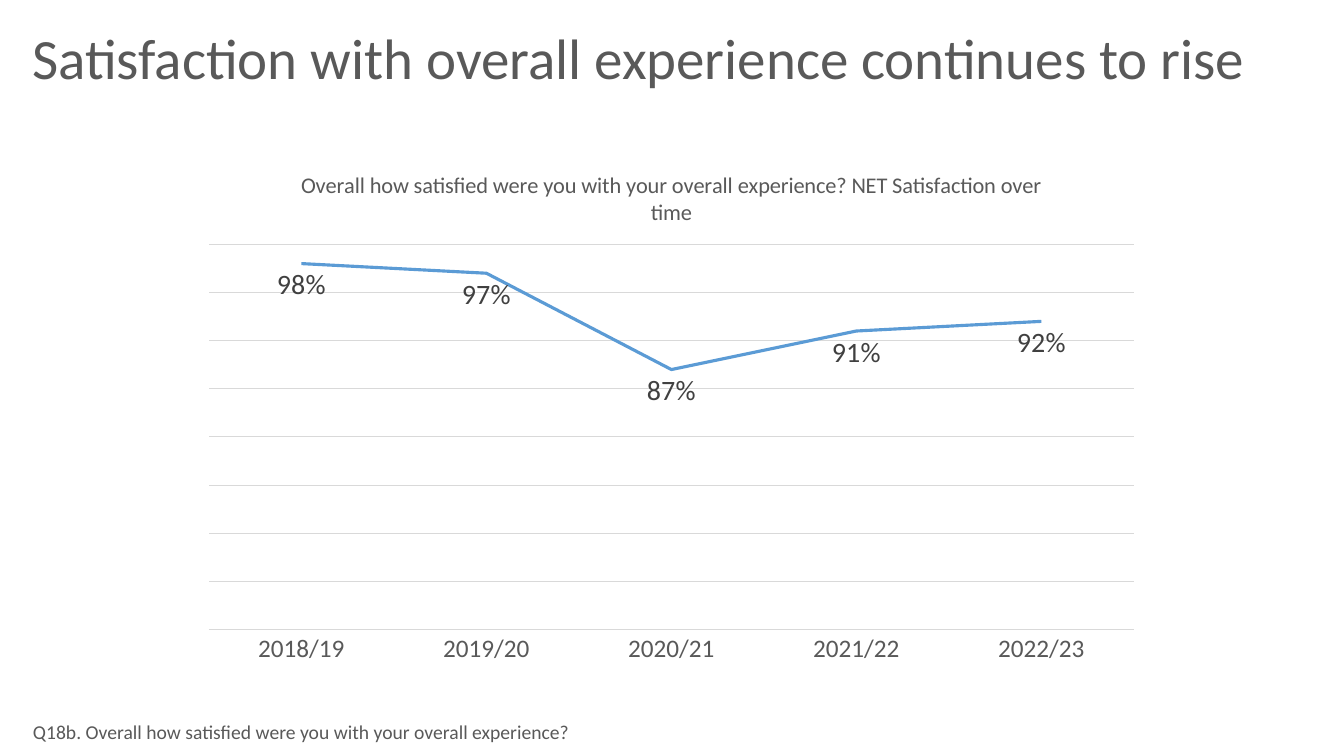
import pptx
import pptx.chart.data
import pptx.dml.color
import pptx.enum.chart
import pptx.enum.text
import pptx.oxml
import pptx.util
from pptx.util import Cm

COLORS = {"text": "595959", "label": "404040", "line": "5B9BD5", "grid": "D9D9D9"}
SATISFACTION = {
    "2018/19": 0.98,
    "2019/20": 0.97,
    "2020/21": 0.87,
    "2021/22": 0.91,
    "2022/23": 0.92,
}
PLOT_LAYOUT = {"x": 0.02, "y": 0.18, "w": 0.96, "h": 0.735}


def apply_format(target, values):
    for name, value in values.items():
        setattr(target, name, value)


def format_font(font, size, color="text"):
    apply_format(font, {"name": "Calibri", "size": pptx.util.Pt(size), "bold": False})
    font.color.rgb = pptx.dml.color.RGBColor.from_string(COLORS[color])


def format_line(line, color, width):
    line.color.rgb = pptx.dml.color.RGBColor.from_string(COLORS[color])
    line.width = pptx.util.Pt(width)


def fill_text(shape, text, size, line_spacing):
    apply_format(shape.text_frame, {
        "text": text,
        "word_wrap": True,
        "auto_size": pptx.enum.text.MSO_AUTO_SIZE.NONE,
        "vertical_anchor": pptx.enum.text.MSO_ANCHOR.TOP,
    })
    paragraph = shape.text_frame.paragraphs[0]
    apply_format(paragraph, {
        "alignment": pptx.enum.text.PP_ALIGN.LEFT,
        "line_spacing": line_spacing,
    })
    format_font(paragraph.runs[0].font, size)


def add_title(slide, left, top, width, height):
    title = slide.shapes.title
    apply_format(title, {"left": left, "top": top, "width": width, "height": height})
    fill_text(title, "Satisfaction with overall experience continues to rise", 40.7, 0.9)


def add_footnote(slide, left, top, width, height):
    footnote = slide.shapes.add_textbox(left, top, width, height)
    fill_text(footnote, "Q18b. Overall how satisfied were you with your overall experience?", 14, 1.0)


def set_plot_layout(chart):
    namespace = "http://schemas.openxmlformats.org/drawingml/2006/chart"
    sizes = "".join(f'<c:{key} val="{value}"/>' for key, value in PLOT_LAYOUT.items())
    layout = pptx.oxml.parse_xml(
        f'<c:layout xmlns:c="{namespace}"><c:manualLayout><c:layoutTarget val="inner"/>'
        f'<c:xMode val="edge"/><c:yMode val="edge"/>{sizes}</c:manualLayout></c:layout>'
    )
    plot_area = chart._chartSpace.chart.plotArea
    for existing in plot_area.findall(f"{{{namespace}}}layout"):
        plot_area.remove(existing)
    plot_area.insert(0, layout)


def add_satisfaction_chart(slide, left, top, width, height):
    data = pptx.chart.data.CategoryChartData(number_format="0%")
    data.categories = list(SATISFACTION)
    data.add_series("Series 1", list(SATISFACTION.values()))
    chart = slide.shapes.add_chart(
        pptx.enum.chart.XL_CHART_TYPE.LINE, left, top, width, height, data
    ).chart
    format_font(chart.font, 10)
    apply_format(chart, {"has_legend": False, "has_title": True})
    title_frame = chart.chart_title.text_frame
    title_frame.text = "Overall how satisfied were you with your overall experience? NET Satisfaction over time"
    format_font(title_frame.paragraphs[0].runs[0].font, 16)
    chart.chart_title.include_in_layout = False
    set_plot_layout(chart)

    no_tick = pptx.enum.chart.XL_TICK_MARK.NONE
    category_axis = chart.category_axis
    apply_format(category_axis, {"major_tick_mark": no_tick, "minor_tick_mark": no_tick})
    format_font(category_axis.tick_labels.font, 18)
    format_line(category_axis.format.line, "grid", 0.75)

    value_axis = chart.value_axis
    apply_format(value_axis, {
        "minimum_scale": 0.6,
        "maximum_scale": 1.0,
        "major_unit": 0.05,
        "has_major_gridlines": True,
        "visible": False,
    })
    format_line(value_axis.major_gridlines.format.line, "grid", 0.75)

    plot = chart.plots[0]
    plot.vary_by_categories = False
    series = plot.series[0]
    series.smooth = False
    series.marker.style = pptx.enum.chart.XL_MARKER_STYLE.NONE
    format_line(series.format.line, "line", 2.25)
    labels = series.data_labels
    apply_format(labels, {
        "show_value": True,
        "number_format": "0%",
        "number_format_is_linked": False,
        "position": pptx.enum.chart.XL_LABEL_POSITION.BELOW,
    })
    format_font(labels.font, 20, "label")


def main():
    presentation = pptx.Presentation()
    apply_format(presentation, {"slide_width": Cm(33.87), "slide_height": Cm(19.05)})
    slide = presentation.slides.add_slide(presentation.slide_layouts[5])
    add_satisfaction_chart(slide, Cm(4.78), Cm(3.78), Cm(24.28), Cm(13.21))
    add_title(slide, Cm(0.56), Cm(0.64), Cm(32.08), Cm(2.18))
    add_footnote(slide, Cm(0.58), Cm(18.01), Cm(26.67), Cm(0.86))
    presentation.save("out.pptx")


if __name__ == "__main__":
    main()
